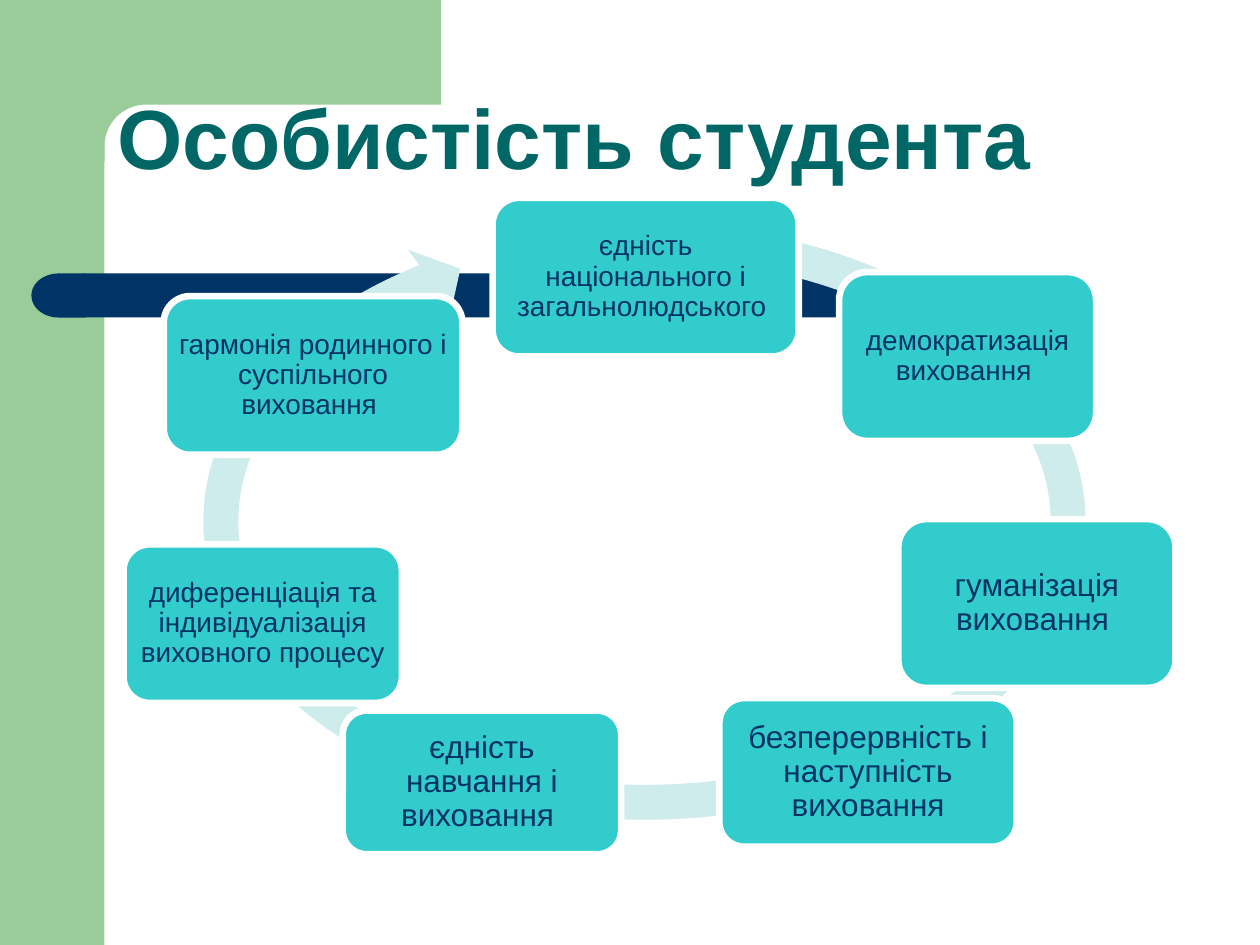
from math import cos, radians, sin

from pptx import Presentation
from pptx.dml.color import RGBColor
from pptx.enum.shapes import MSO_SHAPE as Shape
from pptx.enum.text import MSO_ANCHOR as Anchor, MSO_AUTO_SIZE as AutoSize, PP_ALIGN as Align
from pptx.util import Inches, Pt

GREEN, NAVY, TEAL = "99CC99", "003366", "006666"
CARD, RING, WHITE = "33CCCC", "CEECEC", "FFFFFF"


def paint(shape, fill, line=None):
    shape.shadow.inherit = False
    shape.fill.solid()
    shape.fill.fore_color.rgb = RGBColor.from_string(fill)
    if line:
        shape.line.color.rgb = RGBColor.from_string(line)
        shape.line.width = Pt(3.78)
    else:
        shape.line.fill.background()


def write(frame, text, size, color, align, bold=False):
    frame.word_wrap = True
    frame.auto_size = AutoSize.NONE
    para = frame.paragraphs[0]
    para.alignment = align
    para.line_spacing = 0.9
    para.space_before = Pt(0)
    span = para.add_run()
    span.text = text
    span.font.name = "Arial"
    span.font.size = Pt(size)
    span.font.bold = bold
    span.font.color.rgb = RGBColor.from_string(color)


deck = Presentation()
deck.slide_width, deck.slide_height = Inches(10), Inches(7.5)
page = deck.slides.add_slide(deck.slide_layouts[5])
shapes = page.shapes

# Green side band and navy bar with a rounded left end
for kind, color, *place in [
    (Shape.RECTANGLE, GREEN, 0, 0, 0.83, 7.5),
    (Shape.RECTANGLE, NAVY, 0.67, 2.17, 7.67, 0.35),
    (Shape.FLOWCHART_DELAY, NAVY, 0.25, 2.17, 0.43, 0.35),
]:
    band = shapes.add_shape(kind, *map(Inches, place))
    paint(band, color)
band.element.spPr.xfrm.set("flipH", "1")

# Green top block with a rounded inner corner
radius = 0.33
corner = [
    (1.16 - radius * sin(radians(a)), 1.16 - radius * cos(radians(a)))
    for a in range(0, 91, 5)
]
outline = [(3.5, 0.83), *corner, (0.83, 1.28), (0.5, 1.28), (0.5, 0)]
builder = shapes.build_freeform(Inches(3.5), 0, scale=1.0)
builder.add_line_segments([(Inches(x), Inches(y)) for x, y in outline], close=True)
paint(builder.convert_to_shape(), GREEN)

# Title, in front of the decoration
title = shapes.title
title.left, title.top, title.width, title.height = map(Inches, (0.83, 0.83, 8.67, 0.71))
title.text_frame.vertical_anchor = Anchor.BOTTOM
write(title.text_frame, "Особистість студента", 48, TEAL, Align.LEFT, bold=True)
title.element.getparent().append(title.element)

# Circular arrow behind the cards
ring = shapes.add_shape(Shape.CIRCULAR_ARROW, *map(Inches, (1.46, 1.62, 7.31, 5.04)))
for index, value in enumerate([0.055, 3.307, 137.056, 174.289, 0.058]):
    ring.adjustments[index] = value
paint(ring, RING)

# Cards, clockwise from the top
cards = [
    ("єдність національного і загальнолюдського ", 16, 3.91, 1.57, 2.43, 1.26),
    ("демократизація виховання ", 16, 6.66, 2.16, 2.04, 1.34),
    ("гуманізація виховання ", 18, 7.13, 4.12, 2.2, 1.34),
    ("безперервність і наступність виховання", 18, 5.71, 5.54, 2.36, 1.18),
    ("єдність навчання і виховання ", 18, 2.72, 5.64, 2.21, 1.14),
    ("диференціація та індивідуалізація виховного процесу ", 16, 0.98, 4.32, 2.21, 1.26),
    ("гармонія родинного і суспільного виховання ", 16, 1.3, 2.35, 2.37, 1.26),
]
for text, size, *place in cards:
    card = shapes.add_shape(Shape.ROUNDED_RECTANGLE, *map(Inches, place))
    paint(card, CARD, WHITE)
    frame = card.text_frame
    frame.margin_left = frame.margin_right = Inches(0.06)
    frame.margin_top = frame.margin_bottom = Inches(0.06)
    frame.vertical_anchor = Anchor.MIDDLE
    write(frame, text, size, NAVY, Align.CENTER)

deck.save("out.pptx")
